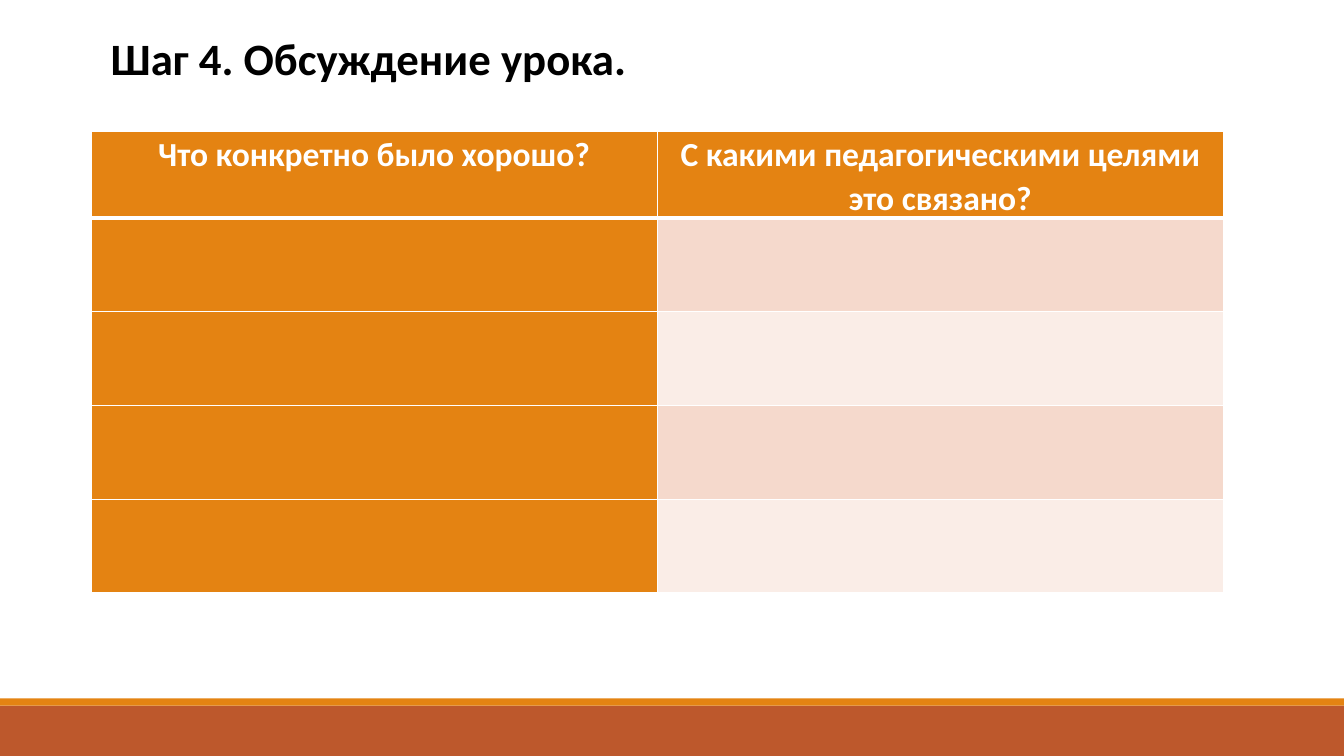
from lxml.etree import SubElement
from pptx import Presentation
from pptx.dml.color import RGBColor
from pptx.enum.shapes import MSO_SHAPE
from pptx.enum.text import PP_ALIGN
from pptx.oxml.ns import qn
from pptx.util import Pt

WHITE = RGBColor(0xFF, 0xFF, 0xFF)
BLACK = RGBColor(0, 0, 0)
ORANGE = RGBColor(0xE4, 0x83, 0x12)
RUST = RGBColor(0xBD, 0x58, 0x2C)
ROSE = RGBColor(0xF5, 0xD9, 0xCC)
PALE = RGBColor(0xFA, 0xED, 0xE7)

WIDTH, HEIGHT = 960, 540
HEADS = ("Что конкретно было хорошо?",
         "С какими педагогическими целями это связано?")
ROWS = 4


def style(para, size, color):
    font = para.font
    font.name, font.size, font.bold = "Calibri", Pt(size), True
    font.color.rgb = color


def add_band(slide, top, height, color):
    band = slide.shapes.add_shape(
        MSO_SHAPE.RECTANGLE, Pt(0), Pt(top), Pt(WIDTH), Pt(height))
    band.shadow.inherit = False
    band.fill.solid()
    band.fill.fore_color.rgb = color
    band.line.fill.background()


def add_title(slide, text):
    box = slide.shapes.add_textbox(Pt(72), Pt(18.7), Pt(795), Pt(106.5))
    box.text_frame.word_wrap = True
    para = box.text_frame.paragraphs[0]
    para.text = text
    style(para, 32, BLACK)


def paint(cell, color, top, bottom):
    # Borders come before the fill in the cell properties
    props = cell._tc.get_or_add_tcPr()
    for side, width in (("L", 1), ("R", 1), ("T", top), ("B", bottom)):
        line = SubElement(props, qn(f"a:ln{side}"), w=str(Pt(width)))
        fill = SubElement(line, qn("a:solidFill"))
        SubElement(fill, qn("a:srgbClr"), val=str(WHITE))
    cell.fill.solid()
    cell.fill.fore_color.rgb = color


def add_head(cell, text):
    cell.margin_left = cell.margin_right = Pt(5)
    cell.margin_top = cell.margin_bottom = Pt(0)
    para = cell.text_frame.paragraphs[0]
    para.text = text
    para.alignment = PP_ALIGN.CENTER
    para.line_spacing = 1.07
    para.space_after = Pt(8)
    style(para, 24, WHITE)


def add_grid(slide):
    table = slide.shapes.add_table(
        ROWS + 1, len(HEADS), Pt(65), Pt(94), Pt(809), Pt(329)).table
    for col in table.columns:
        col.width = Pt(404.5)
    for num, row in enumerate(table.rows):
        row.height = Pt(67 if num else 61)
        tint = (ROSE if num % 2 else PALE) if num else ORANGE
        top, bottom = 3 if num == 1 else 1, 1 if num else 3
        for cell, color in zip(row.cells, (ORANGE, tint)):
            paint(cell, color, top, bottom)
    for col, text in enumerate(HEADS):
        add_head(table.cell(0, col), text)


def main():
    deck = Presentation()
    deck.slide_width, deck.slide_height = Pt(WIDTH), Pt(HEIGHT)
    slide = deck.slides.add_slide(deck.slide_layouts[6])

    # Footer bands
    add_band(slide, 504, 36, RUST)
    add_band(slide, 498.8, 5.2, ORANGE)

    # Heading and discussion table
    add_title(slide, "Шаг 4. Обсуждение урока.")
    add_grid(slide)
    deck.save("out.pptx")


if __name__ == "__main__":
    main()
